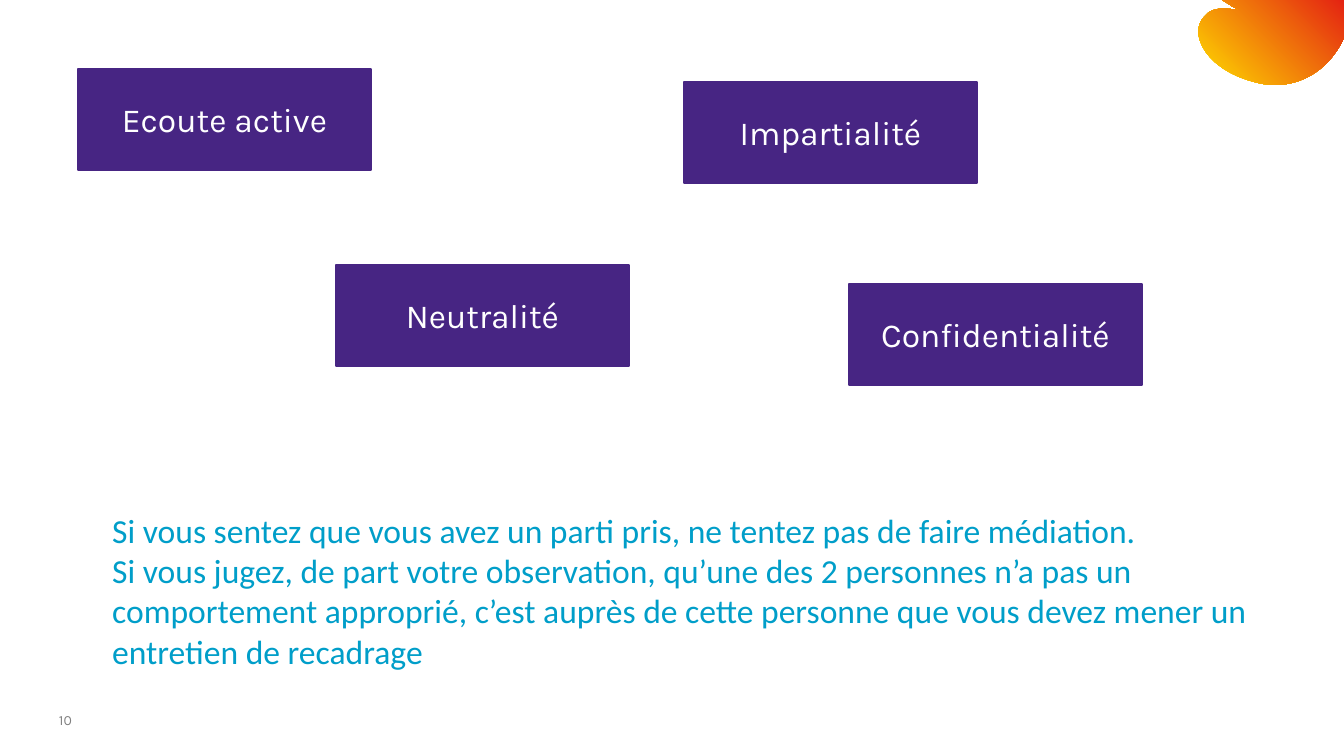
from pptx import Presentation
from pptx.dml.color import RGBColor
from pptx.enum.shapes import MSO_SHAPE
from pptx.enum.text import MSO_ANCHOR, MSO_AUTO_SIZE, PP_ALIGN
from pptx.util import Emu, Pt

PX = 914400 / 134.4
COLORS = {
    "purple": "472583",
    "white": "FFFFFF",
    "blue": "009EC9",
    "gray": "808080",
    "yellow": "FFDD00",
    "red": "E42312",
}
PRINCIPLES = [
    ("Ecoute active", 78, 69),
    ("Neutralité", 336, 265),
    ("Impartialité", 684, 82),
    ("Confidentialité", 849, 284),
]
ADVICE = [
    "Si vous sentez que vous avez un parti pris, ne tentez pas de faire médiation.",
    "Si vous jugez, de part votre observation, qu’une des 2 personnes n’a pas un "
    "comportement approprié, c’est auprès de cette personne que vous devez mener "
    "un entretien de recadrage",
]
PETAL_START = (1222, 0)
PETAL_EDGE = [(1344, 0), (1344, 35), (1343, 40)]
PETAL_CURVES = [
    [(1327, 73), (1293, 93), (1254, 82)],
    [(1204, 69), (1187, 31), (1206, 15)],
    [(1212, 8), (1224, 7), (1242, 11)],
    [(1238, 9), (1234, 8), (1230, 5)],
]


def px(n):
    return Emu(round(n * PX))


def color(name):
    return RGBColor.from_string(COLORS[name])


def style(p, font, size, color_name):
    p.font.name = font
    p.font.size = Pt(size)
    p.font.color.rgb = color(color_name)


def curve_points(start, c1, c2, end, steps=24):
    """Points along a cubic Bézier curve, without its start."""
    points = []
    for i in range(1, steps + 1):
        t = i / steps
        u = 1 - t
        points.append(tuple(
            u**3 * a + 3 * u * u * t * b + 3 * u * t * t * c + t**3 * d
            for a, b, c, d in zip(start, c1, c2, end)))
    return points


def add_petal(s):
    points = list(PETAL_EDGE)
    for curve in PETAL_CURVES:
        points += curve_points(points[-1], *curve)
    builder = s.shapes.build_freeform(*map(px, PETAL_START))
    builder.add_line_segments([(px(x), px(y)) for x, y in points], close=True)
    sp = builder.convert_to_shape()
    sp.shadow.inherit = False
    sp.line.fill.background()
    sp.fill.gradient()
    sp.fill.gradient_angle = 45
    for stop, name in zip(sp.fill.gradient_stops, ("yellow", "red")):
        stop.color.rgb = color(name)


def add_principle(s, text, x, y):
    sp = s.shapes.add_shape(MSO_SHAPE.RECTANGLE, px(x), px(y), px(293), px(101))
    sp.shadow.inherit = False
    sp.fill.solid()
    sp.fill.fore_color.rgb = color("purple")
    sp.line.color.rgb = color("purple")
    sp.line.width = Pt(1.5)
    tf = sp.text_frame
    tf.vertical_anchor = MSO_ANCHOR.MIDDLE
    p = tf.paragraphs[0]
    p.text = text
    p.alignment = PP_ALIGN.CENTER
    style(p, "Karla", 18, "white")


def add_text(s, box, lines, font, size, color_name):
    tf = s.shapes.add_textbox(*map(px, box)).text_frame
    tf.word_wrap = True
    for i, line in enumerate(lines):
        p = tf.add_paragraph() if i else tf.paragraphs[0]
        p.text = line
        style(p, font, size, color_name)
    return tf


def main():
    prs = Presentation()
    prs.slide_width, prs.slide_height = px(1344), px(756)
    s = prs.slides.add_slide(prs.slide_layouts[6])

    add_petal(s)
    number = add_text(s, (59, 715, 79, 13), ["10"], "Karla", 7.5, "gray")
    number.vertical_anchor = MSO_ANCHOR.BOTTOM
    number.margin_left = number.margin_right = 0
    number.margin_top = number.margin_bottom = 0
    for principle in PRINCIPLES:
        add_principle(s, *principle)
    advice = add_text(s, (99, 503, 1184, 176), ADVICE, "Calibri", 18, "blue")
    advice.auto_size = MSO_AUTO_SIZE.SHAPE_TO_FIT_TEXT

    prs.save("out.pptx")


if __name__ == "__main__":
    main()
